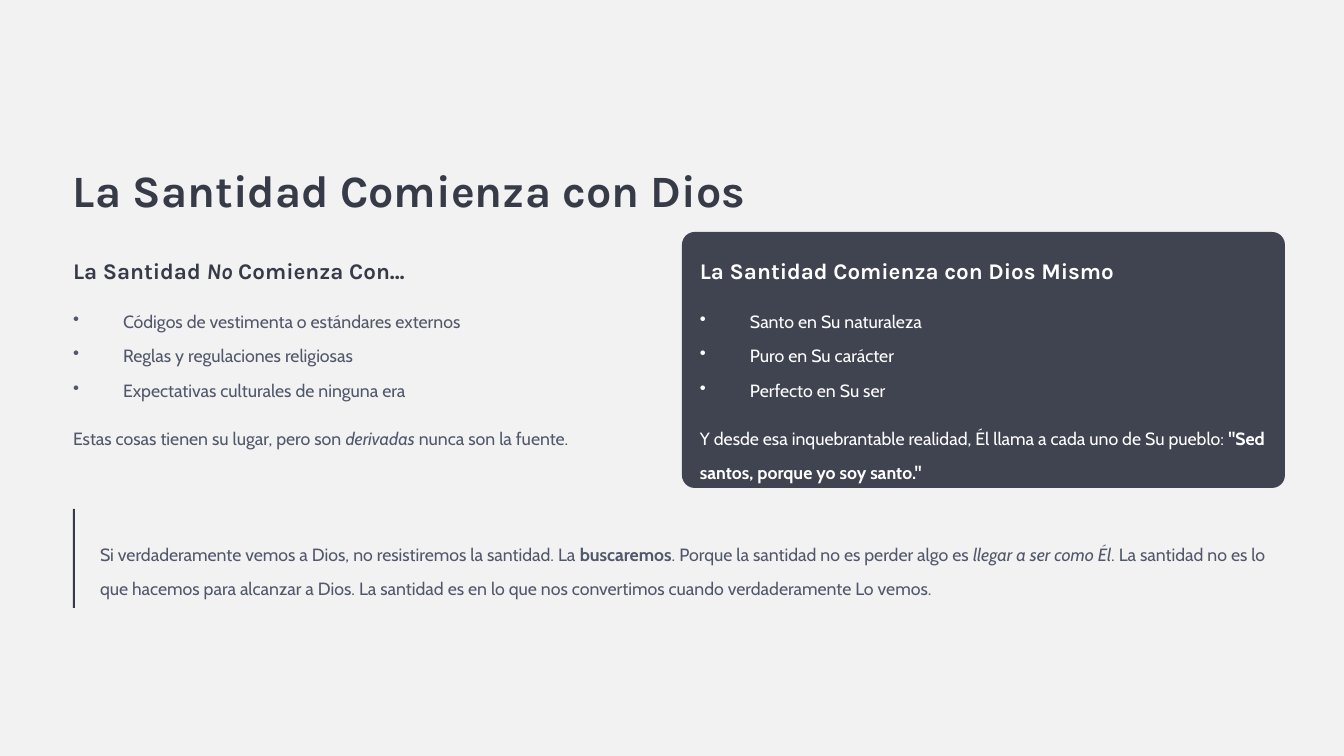
from dataclasses import dataclass

from lxml import etree
from pptx import Presentation
from pptx.dml.color import RGBColor
from pptx.enum.shapes import MSO_SHAPE
from pptx.oxml.ns import qn
from pptx.util import Pt

RECT = MSO_SHAPE.RECTANGLE
ROUND = MSO_SHAPE.ROUNDED_RECTANGLE
SCALE = 914400 / 134.4


@dataclass(frozen=True)
class Theme:
    """Colours and type formats of the slide."""

    back: str = "F2F2F2"
    dark: str = "373B48"
    grey: str = "52586B"
    white: str = "FFFFFF"
    title: tuple = ("Karla", 24, True, 1.27)
    head: tuple = ("Karla", 12, True, 1.25)
    body: tuple = ("Cabin", 9.5, False, 1.63)


THEME = Theme()
BOLD = {"bold": True}
ITAL = {"italic": True}


def px(num):
    """Turn pixels into EMU."""
    return round(num * SCALE)


def rgb(code):
    """Make a colour from its hex code."""
    return RGBColor.from_string(code)


def add_dot(para, color):
    """Give a paragraph a hanging round bullet."""
    props = para._p.get_or_add_pPr()
    props.set("marL", str(px(50)))
    props.set("indent", str(-px(50)))
    tint = etree.SubElement(props, qn("a:buClr"))
    etree.SubElement(tint, qn("a:srgbClr"), val=color)
    etree.SubElement(props, qn("a:buChar"), char="•")


def add_text(slide, area, paras, style, color, dots=False):
    """Add a text box whose paragraphs are lists of runs."""
    frame = slide.shapes.add_textbox(*map(px, area)).text_frame
    inset = dict.fromkeys(("left", "top", "right", "bottom"), 0)
    for side, size in inset.items():
        setattr(frame, f"margin_{side}", size)
    frame.word_wrap = True
    face, size, bold, space = style
    base = {"name": face, "size": Pt(size), "bold": bold, "italic": False}
    for num, runs in enumerate(paras):
        para = frame.add_paragraph() if num else frame.paragraphs[0]
        para.line_spacing = space
        if dots:
            add_dot(para, color)
        for text, extra in runs:
            run = para.add_run()
            run.text = text
            for key, value in {**base, **extra}.items():
                setattr(run.font, key, value)
            run.font.color.rgb = rgb(color)


def add_block(slide, kind, area, color):
    """Add a plain filled shape."""
    block = slide.shapes.add_shape(kind, *map(px, area))
    block.shadow.inherit = False
    block.fill.solid()
    block.fill.fore_color.rgb = rgb(color)
    block.line.fill.background()
    return block


def add_panel(slide, area):
    """Add the rounded, slightly clear panel."""
    panel = add_block(slide, ROUND, area, THEME.dark)
    panel.adjustments[0] = 0.05
    tint = panel._element.spPr.find(qn("a:solidFill"))[0]
    etree.SubElement(tint, qn("a:alpha"), val="95000")


def add_column(slide, left, width, head, items, note, colors):
    """Add a heading, its bullet list and a closing note."""
    top, text = colors
    points = [[(item, {})] for item in items]
    add_text(slide, (left, 250, width, 28), [head], THEME.head, top)
    add_text(slide, (left, 297, width, 101), points, THEME.body, text, True)
    add_text(slide, (left, 414, width, 58), [note], THEME.body, text)


def main():
    """Build and save the slide."""
    deck = Presentation()
    deck.slide_width, deck.slide_height = px(1344), px(756)
    slide = deck.slides.add_slide(deck.slide_layouts[6])
    slide.background.fill.solid()
    slide.background.fill.fore_color.rgb = rgb(THEME.back)

    title = [("La Santidad Comienza con Dios", {})]
    add_text(slide, (73, 148, 699, 56), [title], THEME.title, THEME.dark)
    add_column(
        slide, 73, 577,
        [("La Santidad ", {}), ("No", ITAL), (" Comienza Con…", {})],
        ["Códigos de vestimenta o estándares externos",
         "Reglas y regulaciones religiosas",
         "Expectativas culturales de ninguna era"],
        [("Estas cosas tienen su lugar, pero son ", {}),
         ("derivadas", ITAL), (" nunca son la fuente.", {})],
        (THEME.dark, THEME.grey))
    add_panel(slide, (682, 232, 603, 256))
    add_column(
        slide, 700, 567,
        [("La Santidad Comienza con Dios Mismo", {})],
        ["Santo en Su naturaleza", "Puro en Su carácter",
         "Perfecto en Su ser"],
        [("Y desde esa inquebrantable realidad, Él llama a cada uno "
          "de Su pueblo: ", {}),
         ('"Sed santos, porque yo soy santo."', BOLD)],
        (THEME.white, THEME.white))
    quote = [
        ("Si verdaderamente vemos a Dios, no resistiremos la santidad. La ",
         {}),
        ("buscaremos", BOLD),
        (". Porque la santidad no es perder algo es ", {}),
        ("llegar a ser como Él", ITAL),
        (". La santidad no es lo que hacemos para alcanzar a Dios. "
         "La santidad es en lo que nos convertimos cuando "
         "verdaderamente Lo vemos.", {})]
    add_text(slide, (100, 530, 1171, 58), [quote], THEME.body, THEME.grey)
    add_block(slide, RECT, (73, 509, 2, 99), THEME.dark)
    deck.save("out.pptx")


if __name__ == "__main__":
    main()
